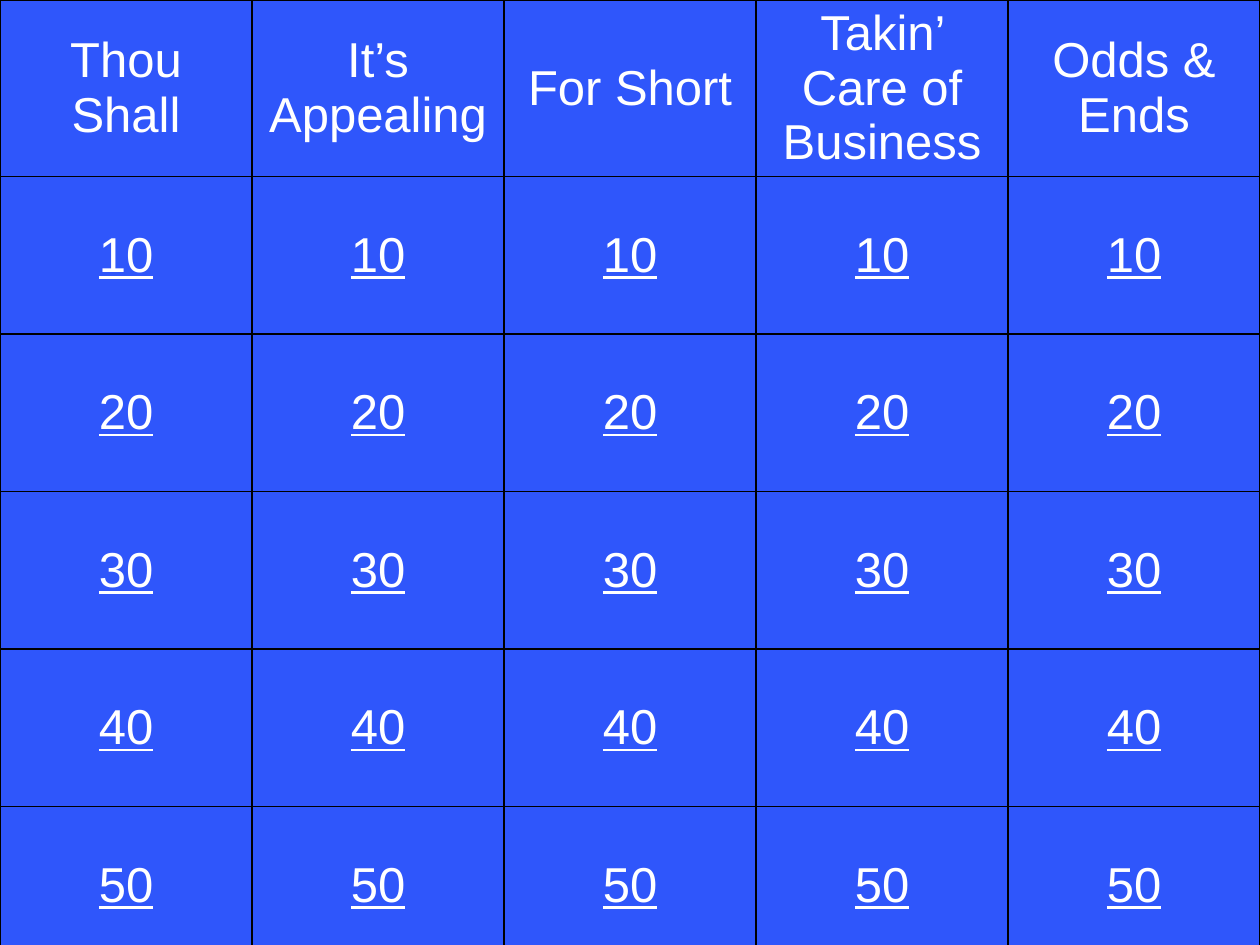
from lxml import etree
from pptx import Presentation
from pptx.dml.color import RGBColor
from pptx.enum.text import MSO_ANCHOR, PP_ALIGN
from pptx.oxml.ns import qn
from pptx.util import Inches, Pt

MIDDLE = MSO_ANCHOR.MIDDLE
CENTER = PP_ALIGN.CENTER

BLUE, WHITE, BLACK = "2F56FB", "FFFFFF", "000000"
CATEGORIES = ["Thou Shall", "It’s Appealing", "For Short",
              "Takin’ Care of Business", "Odds & Ends"]
POINTS = [10, 20, 30, 40, 50]


def color(hex_value):
    return RGBColor.from_string(hex_value)


def add_borders(cell, hex_value, width):
    """Draw a solid line on all four sides; the lines must precede the fill."""
    properties = cell._tc.get_or_add_tcPr()
    for position, side in enumerate(("lnL", "lnR", "lnT", "lnB")):
        line = etree.Element(qn(f"a:{side}"), w=str(Pt(width)))
        fill = etree.SubElement(line, qn("a:solidFill"))
        etree.SubElement(fill, qn("a:srgbClr"), val=hex_value)
        properties.insert(position, line)


def fill_cell(cell, text, underline):
    cell.fill.background()
    add_borders(cell, BLACK, 1)
    cell.vertical_anchor = MIDDLE
    cell.text_frame.text = text
    para = cell.text_frame.paragraphs[0]
    para.alignment = CENTER
    font = para.runs[0].font
    font.name = "Arial"
    font.size = Pt(28)
    font.bold = False
    font.underline = underline
    font.color.rgb = color(WHITE)


def add_game_board(page, left, top, width, height):
    rows = [CATEGORIES] + [[str(value)] * len(CATEGORIES) for value in POINTS]
    frame = page.shapes.add_table(len(rows), len(CATEGORIES), left, top, width, height)
    board = frame.table
    board.first_row = False
    board.horz_banding = False
    for row_index, texts in enumerate(rows):
        for column_index, text in enumerate(texts):
            fill_cell(board.cell(row_index, column_index), text, row_index > 0)


def main():
    deck = Presentation()
    deck.slide_width, deck.slide_height = Inches(10), Inches(7.5)
    page = deck.slides.add_slide(deck.slide_layouts[6])
    page.background.fill.solid()
    page.background.fill.fore_color.rgb = color(BLUE)
    add_game_board(page, Inches(0), Inches(0), deck.slide_width, deck.slide_height)
    deck.save("out.pptx")


if __name__ == "__main__":
    main()
